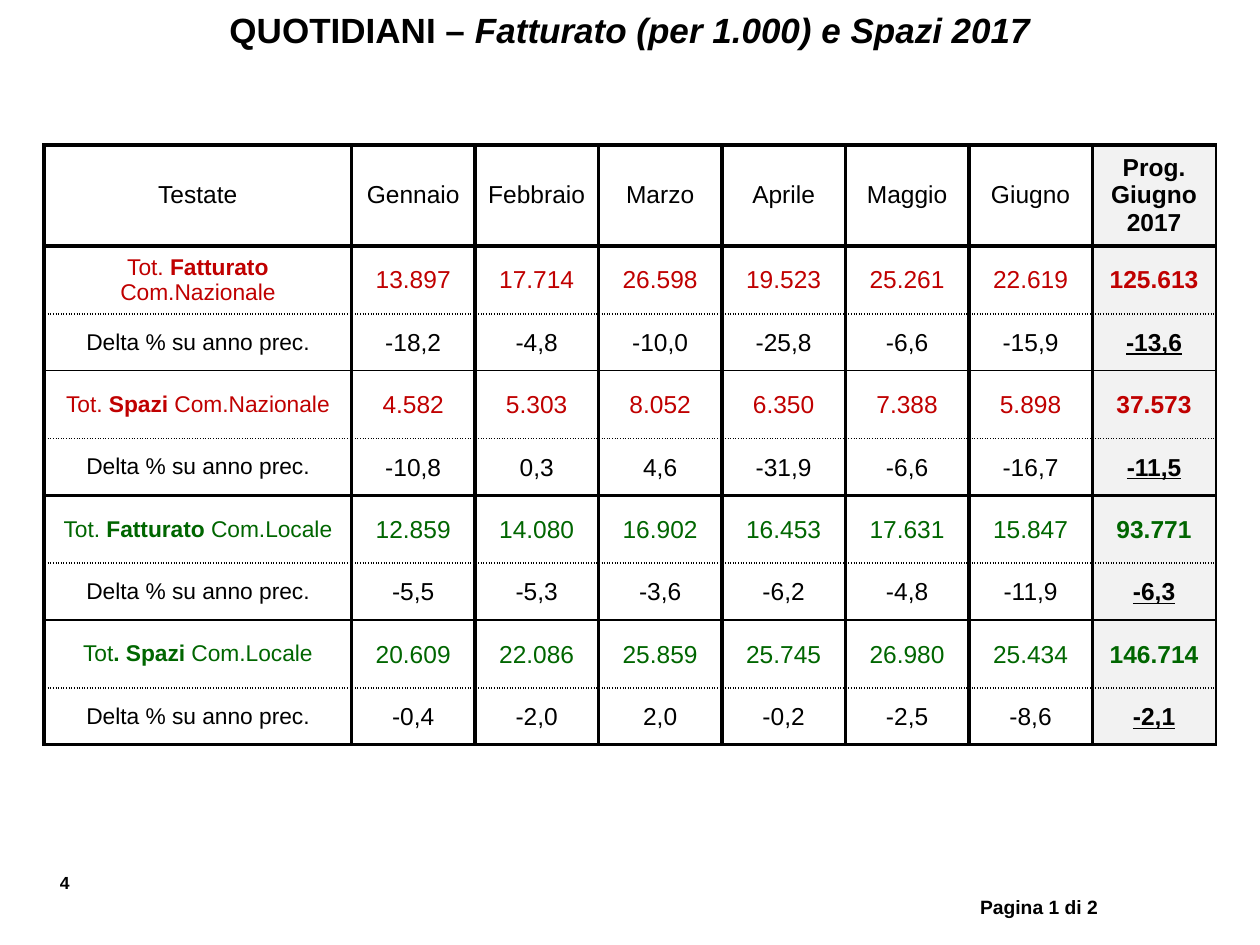
from lxml import etree
from pptx import Presentation
from pptx.dml.color import RGBColor
from pptx.enum import text
from pptx.oxml import ns
from pptx.util import Inches, Pt

THEME = {
    "font": "Arial",
    "black": "000000", "white": "FFFFFF", "shade": "F2F2F2",
    "national": "C00000", "local": "006600",
    "title": 20, "value": 14, "label": 13, "footer": 11, "number": 10,
}
# Border styles: width in points, dash
THICK, THIN, DOTTED = (2.25, "solid"), (1, "solid"), (1, "sysDot")

TITLE = ("QUOTIDIANI – ", "Fatturato (per 1.000) e Spazi 2017")
PAGE_NUMBER = "4"
PAGE_COUNT = "Pagina 1 di 2"

HEADER = ["Testate", "Gennaio", "Febbraio", "Marzo", "Aprile", "Maggio",
          "Giugno", "Prog.\vGiugno 2017"]
DELTA_LABEL = "Delta % su anno prec."
# Market, label as (plain, bold, plain), totals, deltas
MEASURES = [
    ("national", ("Tot. ", "Fatturato ", "Com.Nazionale"),
     ["13.897", "17.714", "26.598", "19.523", "25.261", "22.619", "125.613"],
     ["-18,2", "-4,8", "-10,0", "-25,8", "-6,6", "-15,9", "-13,6"]),
    ("national", ("Tot. ", "Spazi ", "Com.Nazionale"),
     ["4.582", "5.303", "8.052", "6.350", "7.388", "5.898", "37.573"],
     ["-10,8", "0,3", "4,6", "-31,9", "-6,6", "-16,7", "-11,5"]),
    ("local", ("Tot. ", "Fatturato ", "Com.Locale"),
     ["12.859", "14.080", "16.902", "16.453", "17.631", "15.847", "93.771"],
     ["-5,5", "-5,3", "-3,6", "-6,2", "-4,8", "-11,9", "-6,3"]),
    ("local", ("Tot", ". Spazi ", "Com.Locale"),
     ["20.609", "22.086", "25.859", "25.745", "26.980", "25.434", "146.714"],
     ["-0,4", "-2,0", "2,0", "-0,2", "-2,5", "-8,6", "-2,1"]),
]

COLUMN_WIDTHS = [2.44] + [0.98] * 7
ROW_HEIGHTS = [0.8] + [0.54, 0.45] * len(MEASURES)
# Horizontal rules from the top edge of the table to its bottom edge
ROW_RULES = [THICK, THICK] + [DOTTED, THIN, DOTTED, THICK] * 2
COLUMN_RULES = [THICK] * len(HEADER) + [THIN]
LABEL_INSETS = (0.1, 0.05, 0.1, 0.05)
VALUE_INSETS = (0.01, 0.01, 0.01, 0)


def format_runs(paragraph, size, color="black", bold=False):
    for run in paragraph.runs:
        font = run.font
        font.name, font.size, font.bold = THEME["font"], Pt(size), bold
        font.color.rgb = RGBColor.from_string(THEME[color])


def add_runs(paragraph, pieces):
    for piece in pieces:
        paragraph.add_run().text = piece


def add_text_box(slide, box, pieces, size, alignment):
    shape = slide.shapes.add_textbox(*map(Inches, box))
    shape.text_frame.word_wrap = True
    paragraph = shape.text_frame.paragraphs[0]
    paragraph.alignment = alignment
    add_runs(paragraph, pieces)
    format_runs(paragraph, size, bold=True)
    return paragraph


def add_border(cell, side, rule):
    width, dash = rule
    properties = cell._tc.get_or_add_tcPr()
    line = etree.SubElement(properties, ns.qn(f"a:ln{side}"), w=str(Pt(width)))
    fill = etree.SubElement(line, ns.qn("a:solidFill"))
    etree.SubElement(fill, ns.qn("a:srgbClr"), val=THEME["black"])
    etree.SubElement(line, ns.qn("a:prstDash"), val=dash)


def style_cell(cell, row, column, insets):
    rules = {"L": COLUMN_RULES[column], "R": COLUMN_RULES[column + 1],
             "T": ROW_RULES[row], "B": ROW_RULES[row + 1]}
    for side, rule in rules.items():
        add_border(cell, side, rule)
    is_total = column == len(HEADER) - 1
    cell.fill.solid()
    cell.fill.fore_color.rgb = RGBColor.from_string(
        THEME["shade" if is_total else "white"])
    cell.vertical_anchor = text.MSO_ANCHOR.MIDDLE
    (cell.margin_left, cell.margin_top,
     cell.margin_right, cell.margin_bottom) = map(Inches, insets)


def fill_row(table, row, label, values, color="black", underline_total=False):
    is_header = row == 0
    for column, content in enumerate([label, *values]):
        cell = table.cell(row, column)
        is_label = column == 0
        is_total = column == len(values)
        wide_insets = is_header or is_label
        style_cell(cell, row, column,
                   LABEL_INSETS if wide_insets else VALUE_INSETS)
        paragraph = cell.text_frame.paragraphs[0]
        paragraph.alignment = text.PP_ALIGN.CENTER
        if isinstance(content, tuple):
            add_runs(paragraph, content)
        else:
            paragraph.text = content
        size = THEME["label" if is_label and not is_header else "value"]
        format_runs(paragraph, size, color, bold=is_total)
        if isinstance(content, tuple):
            paragraph.runs[1].font.bold = True
        if is_total and underline_total:
            paragraph.runs[0].font.underline = True


def add_results_table(slide):
    frame = slide.shapes.add_table(
        len(ROW_HEIGHTS), len(COLUMN_WIDTHS), Inches(0.35), Inches(1.15),
        Inches(sum(COLUMN_WIDTHS)), Inches(sum(ROW_HEIGHTS)))
    table = frame.table
    table.first_row = table.horz_banding = False
    for column, width in zip(table.columns, COLUMN_WIDTHS):
        column.width = Inches(width)
    for row, height in zip(table.rows, ROW_HEIGHTS):
        row.height = Inches(height)
    fill_row(table, 0, HEADER[0], HEADER[1:])
    for index, (market, label, totals, deltas) in enumerate(MEASURES):
        row = 1 + 2 * index
        fill_row(table, row, label, totals, market)
        fill_row(table, row + 1, DELTA_LABEL, deltas, underline_total=True)


def main():
    presentation = Presentation()
    presentation.slide_width = Inches(10)
    presentation.slide_height = Inches(7.5)
    slide = presentation.slides.add_slide(presentation.slide_layouts[6])

    align = text.PP_ALIGN
    add_text_box(slide, (0.19, 6.87, 0.46, 0.27), [PAGE_NUMBER],
                 THEME["number"], align.RIGHT)
    title = add_text_box(slide, (0, 0.02, 10, 0.44), TITLE,
                         THEME["title"], align.CENTER)
    title.runs[1].font.italic = True
    add_results_table(slide)
    add_text_box(slide, (7.68, 7.06, 1.42, 0.29), [PAGE_COUNT],
                 THEME["footer"], align.LEFT)
    presentation.save("out.pptx")


if __name__ == "__main__":
    main()
